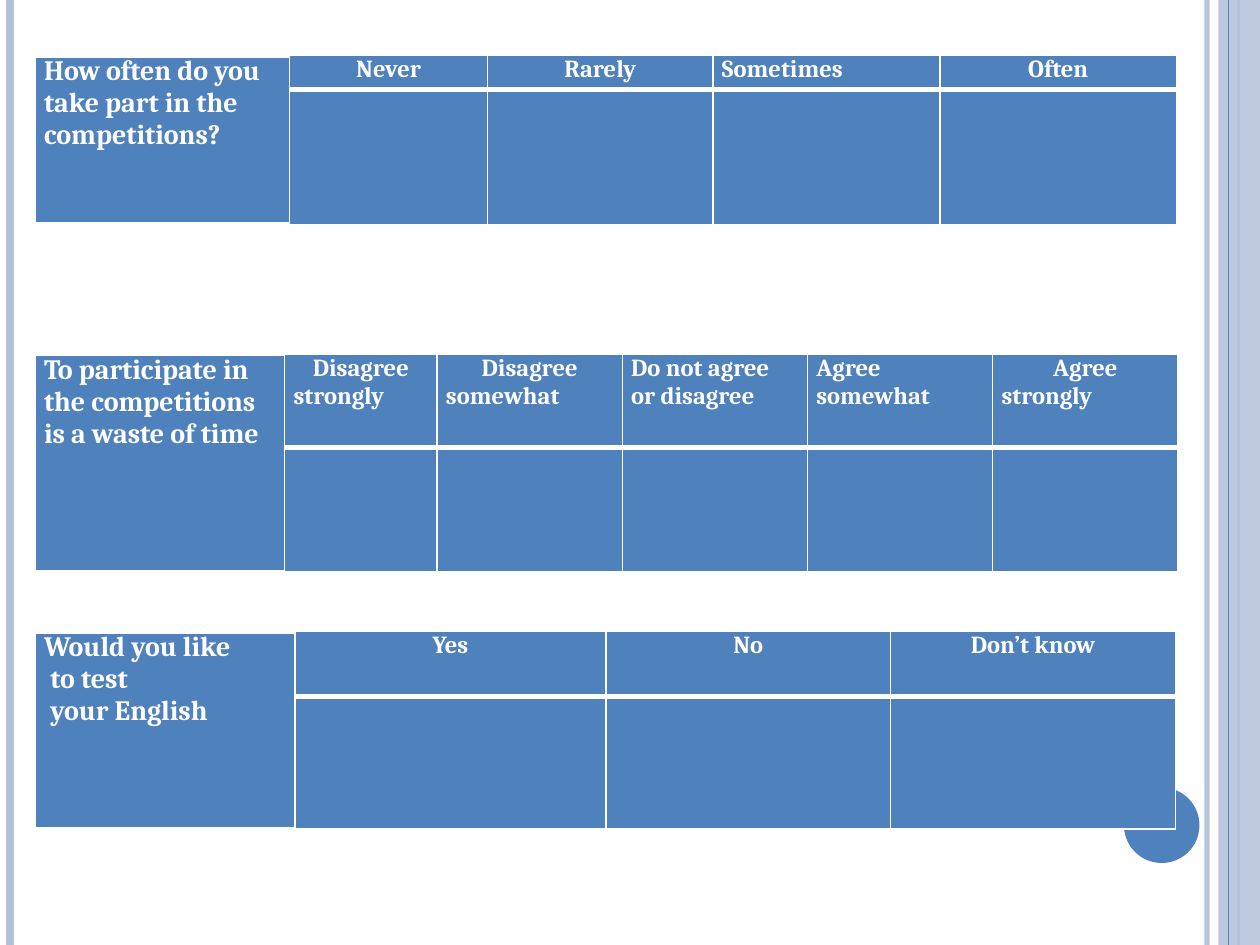
import pptx
import pptx.dml.color
import pptx.enum.shapes
import pptx.enum.text
import pptx.oxml
import pptx.oxml.ns
import pptx.util
from lxml import etree

WIDTH = pptx.util.Inches(10)
HEIGHT = pptx.util.Inches(7.5)
BLUE, PALE, WHITE = "4F81BD", "B3C1DB", "FFFFFF"
TABLE_LEFT = 2.8
CENTER = pptx.enum.text.PP_ALIGN.CENTER
LEFT = pptx.enum.text.PP_ALIGN.LEFT

SURVEY = [
    {
        "top": 5.87, "rows": [3.6, 14.27], "columns": [20.2, 15.7, 17.9, 18, 18.8],
        "question": ["How often do you take part in the competitions?"],
        "answers": [["Never"], ["Rarely"], ["Sometimes"], ["Often"]],
        "left_aligned": ["Sometimes"],
    },
    {
        "top": 37.47, "rows": [9.87, 13.2], "columns": [19.8, 12.1] + [14.7] * 4,
        "question": ["To participate in the competitions is a waste of time"],
        "answers": [["Disagree", "strongly"], ["Disagree", "somewhat"],
                    ["Do not agree or disagree"], ["Agree somewhat"], ["Agree", "strongly"]],
        "left_aligned": ["strongly", "somewhat", "Do not agree or disagree", "Agree somewhat"],
    },
    {
        "top": 66.8, "rows": [6.93, 14], "columns": [20.6, 24.7, 22.6, 22.6],
        "question": ["Would you like", "to test", "your English"],
        "answers": [["Yes"], ["No"], ["Don’t know"]],
        "left_aligned": [],
    },
]


def across(percent):
    return round(WIDTH * percent / 100)


def down(percent):
    return round(HEIGHT * percent / 100)


def color(hex_code):
    return pptx.dml.color.RGBColor.from_string(hex_code)


def paint(fill, hex_code):
    fill.solid()
    fill.fore_color.rgb = color(hex_code)


def set_opacity(element, percent):
    swatch = next(element.iter(pptx.oxml.ns.qn("a:srgbClr")))
    alpha = etree.SubElement(swatch, pptx.oxml.ns.qn("a:alpha"))
    alpha.set("val", str(percent * 1000))


def add_rule(slide, x, hex_code, weight, opacity=100):
    rule = slide.shapes.add_connector(
        pptx.enum.shapes.MSO_CONNECTOR.STRAIGHT, across(x), 0, across(x), HEIGHT)
    rule.line.width = pptx.util.Pt(weight)
    paint(rule.line.fill, hex_code)
    properties = rule._element.spPr
    if opacity < 100:
        set_opacity(properties, opacity)
    etree.SubElement(properties, pptx.oxml.ns.qn("a:effectLst"))


def add_solid(slide, kind, x, y, width, height, hex_code, opacity=100):
    solid = slide.shapes.add_shape(kind, across(x), down(y), across(width), down(height))
    solid.shadow.inherit = False
    paint(solid.fill, hex_code)
    solid.line.fill.background()
    if opacity < 100:
        set_opacity(solid._element.spPr, opacity)


def write(frame, text, size=14, align=LEFT, first=False, indent=0):
    paragraph = frame.paragraphs[0] if first else frame.add_paragraph()
    paragraph.alignment = align
    if indent:
        paragraph._p.get_or_add_pPr().set("marL", str(pptx.util.Inches(indent)))
    run = paragraph.add_run()
    run.text = text
    run.font.name = "Cambria"
    run.font.size = pptx.util.Pt(size)
    run.font.bold = True
    run.font.color.rgb = color(WHITE)


def style_cell(cell, top, bottom):
    cell.margin_left = cell.margin_right = pptx.util.Inches(0.07)
    cell.margin_top = cell.margin_bottom = 0
    properties = cell._tc.get_or_add_tcPr()
    for side, weight in (("L", 1), ("R", 1), ("T", top), ("B", bottom)):
        properties.append(pptx.oxml.parse_xml(
            f'<a:ln{side} {pptx.oxml.ns.nsdecls("a")} w="{pptx.util.Pt(weight)}">'
            f'<a:solidFill><a:srgbClr val="{WHITE}"/></a:solidFill></a:ln{side}>'))
    paint(cell.fill, BLUE)


def add_question(slide, top, rows, columns, question, answers, left_aligned):
    table = slide.shapes.add_table(
        len(rows), len(columns), across(TABLE_LEFT), down(top),
        across(sum(columns)), down(sum(rows))).table
    table.first_row = table.horz_banding = False
    for column, width in zip(table.columns, columns):
        column.width = across(width)
    for row, height in zip(table.rows, rows):
        row.height = down(height)
    for index in range(len(columns)):
        style_cell(table.cell(0, index), 3 if index == 0 else 1, 3)
        style_cell(table.cell(1, index), 3, 3 if index == 0 else 1)
    prompt = table.cell(0, 0)
    prompt.merge(table.cell(1, 0))
    for number, line in enumerate(question):
        write(prompt.text_frame, line, size=16, first=number == 0,
              indent=0.05 if number else 0)
    for index, answer in enumerate(answers, start=1):
        for number, line in enumerate(answer):
            write(table.cell(0, index).text_frame, line, first=number == 0,
                  align=LEFT if line in left_aligned else CENTER)


def add_frame(slide):
    shapes = pptx.enum.shapes.MSO_SHAPE
    add_rule(slide, 95.8, PALE, 3, opacity=93)
    add_rule(slide, 0.8, PALE, 4.5)
    add_rule(slide, 98.3, PALE, 1.5)
    add_solid(slide, shapes.RECTANGLE, 96.7, 0, 3.3, 100, PALE, opacity=87)
    add_rule(slide, 97.5, BLUE, 0.75)
    add_solid(slide, shapes.OVAL, 89.2, 83.33, 6, 8, BLUE)


def main():
    deck = pptx.Presentation()
    deck.slide_width, deck.slide_height = WIDTH, HEIGHT
    slide = deck.slides.add_slide(deck.slide_layouts[6])
    paint(slide.background.fill, WHITE)
    add_frame(slide)
    for item in SURVEY:
        add_question(slide, **item)
    deck.save("out.pptx")


if __name__ == "__main__":
    main()
